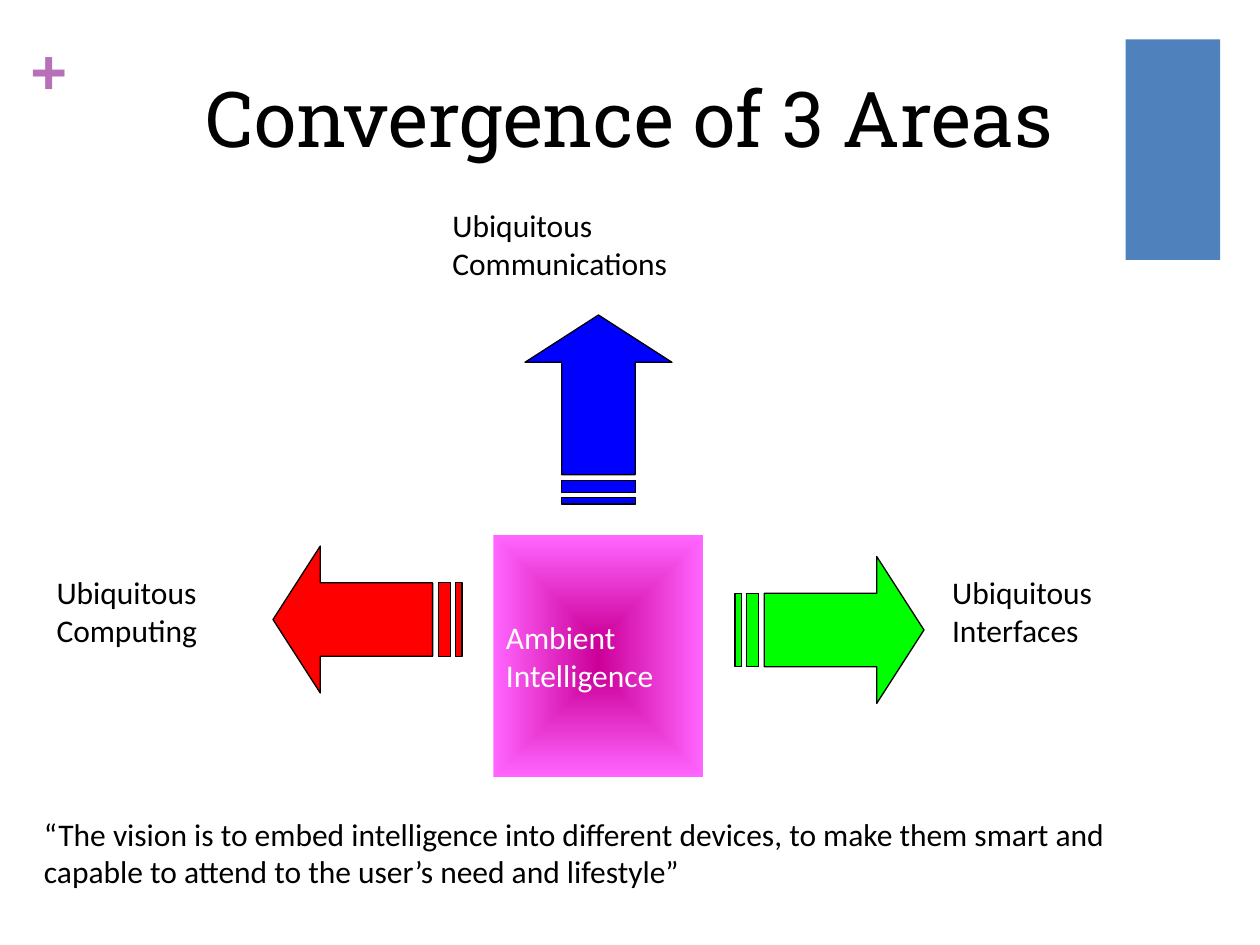
from lxml.etree import SubElement
from pptx import Presentation
from pptx.dml.color import RGBColor
from pptx.enum.shapes import MSO_SHAPE
from pptx.enum.text import MSO_ANCHOR, PP_ALIGN
from pptx.oxml.ns import qn
from pptx.util import Inches, Pt

BLACK = RGBColor(0x00, 0x00, 0x00)
WHITE = RGBColor(0xFF, 0xFF, 0xFF)
STEEL = RGBColor(0x4F, 0x81, 0xBD)
MAUVE = RGBColor(0xB8, 0x70, 0xB8)
GREEN = RGBColor(0x00, 0xFF, 0x00)
RED = RGBColor(0xFF, 0x00, 0x00)
BLUE = RGBColor(0x00, 0x00, 0xFF)
CORE = RGBColor(0xCC, 0x00, 0x99)
RIM = RGBColor(0xFF, 0x66, 0xFF)

HEAD = [(13.5, 0), (13.5, 3.5), (2.8, 3.5), (2.8, 10.5), (13.5, 10.5), (13.5, 14), (18, 7)]
BARS = [(1.1, 2.25), (0, 0.6)]


def write(frame, text, size=18, font="Calibri", color=BLACK, bold=False,
          align=PP_ALIGN.LEFT, anchor=MSO_ANCHOR.TOP, inset=None):
    frame.text = text
    frame.word_wrap = True
    frame.vertical_anchor = anchor
    if inset is not None:
        frame.margin_left = frame.margin_right = inset
        frame.margin_top = frame.margin_bottom = inset
    for para in frame.paragraphs:
        para.alignment = align
        for run in para.runs:
            run.font.size = Pt(size)
            run.font.name = font
            run.font.bold = bold
            run.font.color.rgb = color


class Board:
    """Draws on one slide, on a grid of 120 columns by 90 rows."""

    def __init__(self, deck):
        self.cell = deck.slide_width / 120
        self.slide = deck.slides.add_slide(deck.slide_layouts[5])
        self.shapes = self.slide.shapes

    def grid(self, *cells):
        return [round(c * self.cell) for c in cells]

    def title(self, text, *area):
        head = self.shapes.title
        head.left, head.top, head.width, head.height = self.grid(*area)
        write(head.text_frame, text, size=44, font="Roboto Slab",
              align=PP_ALIGN.CENTER, anchor=MSO_ANCHOR.MIDDLE)

    def label(self, text, *area, **style):
        box = self.shapes.add_textbox(*self.grid(*area))
        write(box.text_frame, text, **style)

    def block(self, color, *area):
        rect = self.shapes.add_shape(MSO_SHAPE.RECTANGLE, *self.grid(*area))
        rect.shadow.inherit = False
        rect.line.fill.background()
        rect.fill.solid()
        rect.fill.fore_color.rgb = color
        return rect

    def glow(self, text, inner, outer, *area):
        rect = self.block(inner, *area)
        rect.fill.gradient()
        for stop, color, spot in zip(rect.fill.gradient_stops, (inner, outer), (0, 1)):
            stop.color.rgb = color
            stop.position = spot
        grad = rect.element.spPr.find(qn("a:gradFill"))
        grad.remove(grad.find(qn("a:lin")))
        fade = SubElement(grad, qn("a:path"), path="rect")
        SubElement(fade, qn("a:fillToRect"), l="50000", t="50000", r="50000", b="50000")
        write(rect.text_frame, text, color=WHITE, anchor=MSO_ANCHOR.MIDDLE)

    def arrow(self, color, left, top, turn=0):
        bars = [[(a, 3.5), (a, 10.5), (b, 10.5), (b, 3.5)] for a, b in BARS]
        head, *rest = [[self.grid(left + x, top + y) for x, y in part]
                       for part in [HEAD] + bars]
        pen = self.shapes.build_freeform(*head[0])
        pen.add_line_segments(head[1:])
        for part in rest:
            pen.move_to(*part[0])
            pen.add_line_segments(part[1:])
        shape = pen.convert_to_shape()
        shape.shadow.inherit = False
        shape.fill.solid()
        shape.fill.fore_color.rgb = color
        shape.line.color.rgb = BLACK
        shape.line.width = Pt(0.75)
        shape.rotation = turn


def main():
    deck = Presentation()
    deck.slide_width, deck.slide_height = Inches(10), Inches(7.5)
    board = Board(deck)
    board.block(STEEL, 107.2, 3.75, 9, 21)
    board.label("+", 2.9, 3, 3.4, 7.3, size=36, font="Arial",
                color=MAUVE, bold=True, inset=0)
    board.title("Convergence of 3 Areas", 6, 3.6, 108, 15)
    board.arrow(GREEN, 70, 53)
    board.arrow(RED, 26, 52, turn=180)
    board.arrow(BLUE, 48, 32, turn=270)
    board.glow("Ambient\nIntelligence", CORE, RIM, 47, 51, 20, 23)
    for name, left, top, width in [("Interfaces", 89.5, 54, 19.2),
                                   ("Computing", 4.2, 54, 19.8),
                                   ("Communications", 41.9, 19, 28.6)]:
        board.label(f"Ubiquitous\n{name}", left, top, width, 9.2)
    board.label("“The vision is to embed intelligence into different devices, to make "
                "them smart and capable to attend to the user’s need and lifestyle”",
                3, 77, 110, 8.4)
    deck.save("out.pptx")


if __name__ == "__main__":
    main()
